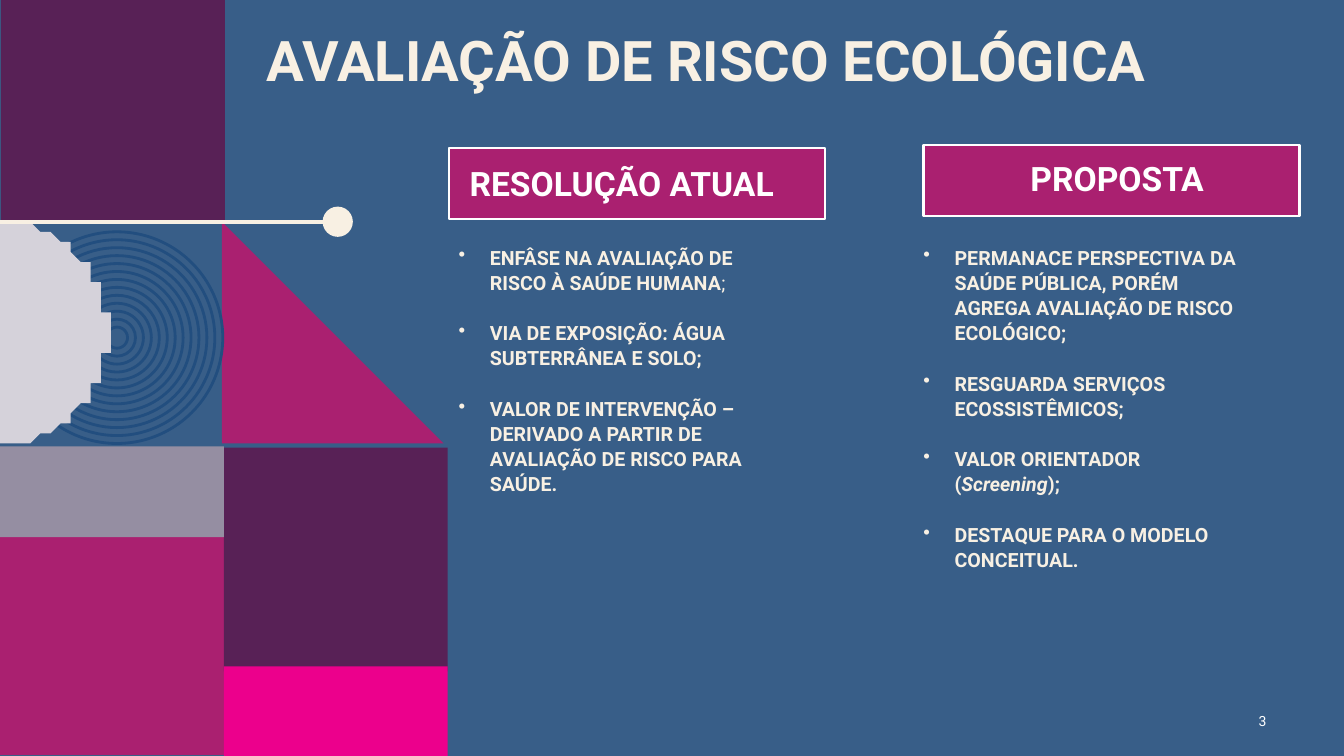
import math

import pptx
import pptx.dml.color
import pptx.enum.shapes
import pptx.enum.text
import pptx.oxml.ns
import pptx.util
from lxml import etree

SHAPE = pptx.enum.shapes.MSO_SHAPE
ALIGN = pptx.enum.text.PP_ALIGN
ANCHOR = pptx.enum.text.MSO_ANCHOR
PURPLE, MAGENTA, PINK, BLUE = "582156", "AA2070", "EC008C", "385E88"
NAVY, GRAY, PALE, CREAM, WHITE = "224E7F", "958EA2", "D5D2DA", "F8F0E3", "FFFFFF"


def color(hex_string):
    return pptx.dml.color.RGBColor.from_string(hex_string)


def paint(shape, fill=None, line=None, weight=0):
    shape.shadow.inherit = False
    if fill:
        shape.fill.solid()
        shape.fill.fore_color.rgb = color(fill)
    else:
        shape.fill.background()
    if line:
        shape.line.color.rgb = color(line)
        shape.line.width = pptx.util.Pt(weight)
    else:
        shape.line.fill.background()


presentation = pptx.Presentation()
presentation.slide_width = pptx.util.Inches(13.33)
presentation.slide_height = pptx.util.Inches(7.5)
slide = presentation.slides.add_slide(presentation.slide_layouts[6])
slide.background.fill.solid()
slide.background.fill.fore_color.rgb = color(BLUE)
shapes = slide.shapes

# Grid: 75 rows of cells; the decoration uses square tiles
cell = presentation.slide_height / 75
tile = 22.2

# Tiles and triangle: left, top, width, height in cells
tiles = [
    (0.1, 0, tile, tile, PURPLE),
    (0, 52.7, tile, tile, MAGENTA),
    (tile, 2 * tile, tile, tile, PURPLE),
    (tile, 66.1, tile, 8.9, PINK),
    (-0.1, 21.9, tile, tile, BLUE),
]
for *box, fill in tiles:
    shape = shapes.add_shape(SHAPE.RECTANGLE, *[int(n * cell) for n in box])
    paint(shape, fill)

builder = shapes.build_freeform(tile, tile, scale=cell)
builder.add_line_segments([(2 * tile, 2 * tile), (tile, 2 * tile)], close=True)
paint(builder.convert_to_shape(), MAGENTA)

# Concentric rings
ring_count, ring_x, ring_y = 13, 11.6, 33.5
for index in range(ring_count):
    radius = 10.5 - index * 9.45 / (ring_count - 1)
    box = (ring_x - radius, ring_y - radius, 2 * radius, 2 * radius)
    ring = shapes.add_shape(SHAPE.OVAL, *[int(n * cell) for n in box])
    paint(ring, None, NAVY, 2)

# Gray band and half disc
band = shapes.add_shape(
    SHAPE.RECTANGLE, 0, *[int(n * cell) for n in (44.3, tile, 9)])
paint(band, GRAY)

disc_x, disc_y, disc_radius = -0.4, 33, 11.1
builder = shapes.build_freeform(0, disc_y - disc_radius, scale=cell)
arc = [(disc_x + disc_radius * math.cos(math.radians(angle)),
        disc_y + disc_radius * math.sin(math.radians(angle)))
       for angle in range(-87, 88, 3)]
builder.add_line_segments(arc + [(0, disc_y + disc_radius)], close=True)
paint(builder.convert_to_shape(), PALE)

# Line ending in a dot
connector = shapes.add_connector(
    pptx.enum.shapes.MSO_CONNECTOR.STRAIGHT,
    *[int(n * cell) for n in (0, 22, 32.6, 22)])
connector.line.color.rgb = color(CREAM)
connector.line.width = pptx.util.Pt(3)
etree.SubElement(connector._element.spPr, pptx.oxml.ns.qn("a:effectLst"))
dot = shapes.add_shape(
    SHAPE.OVAL, *[int(n * cell) for n in (32, 20.5, 3, 3)])
paint(dot, CREAM)

# Heading frames
for left, top in [(91.6, 14.4), (44.5, 14.7)]:
    frame = shapes.add_shape(
        SHAPE.RECTANGLE, *[int(n * cell) for n in (left, top, 37.3, 7)])
    paint(frame, MAGENTA, WHITE, 1.5)

# Title, headings and slide number
heading = {"line_spacing": pptx.util.Pt(24)}
labels = [
    ("AVALIAÇÃO DE RISCO ECOLÓGICA", (25.5, 2.8, 98.6, 14.5), 40, CREAM, True,
     {"line_spacing": 0.9}, ANCHOR.TOP),
    ("RESOLUÇÃO ATUAL", (45.6, 16.3, 35, 4), 24, WHITE, True,
     heading, ANCHOR.TOP),
    ("PROPOSTA", (93.3, 15.8, 35, 4), 24, WHITE, True,
     {**heading, "alignment": ALIGN.CENTER}, ANCHOR.TOP),
    ("3", (121.6, 69.5, 5, 4), 10, WHITE, False,
     {"alignment": ALIGN.RIGHT}, ANCHOR.MIDDLE),
]
for text, box, size, text_color, bold, paragraph_format, anchor in labels:
    text_frame = shapes.add_textbox(*[int(n * cell) for n in box]).text_frame
    text_frame.word_wrap = True
    text_frame.vertical_anchor = anchor
    paragraph = text_frame.paragraphs[0]
    for name, value in paragraph_format.items():
        setattr(paragraph, name, value)
    run = paragraph.add_run()
    run.text = text
    run.font.color.rgb = color(text_color)
    font_format = {"name": "Roboto", "size": pptx.util.Pt(size), "bold": bold}
    for name, value in font_format.items():
        setattr(run.font, name, value)

# Bullet columns: each item is a list of runs with their differing format
columns = [
    (44.5, [
        [("ENFÂSE NA AVALIAÇÃO DE RISCO À SAÚDE HUMANA", {}),
         (";", {"bold": False})],
        [("VIA DE EXPOSIÇÃO: ÁGUA SUBTERRÂNEA E SOLO;", {})],
        [("VALOR DE INTERVENÇÃO – DERIVADO A PARTIR DE AVALIAÇÃO DE RISCO "
          "PARA SAÚDE.", {})],
    ]),
    (90.6, [
        [("PERMANACE PERSPECTIVA DA SAÚDE PÚBLICA, PORÉM AGREGA AVALIAÇÃO "
          "DE RISCO ECOLÓGICO;", {})],
        [("RESGUARDA SERVIÇOS ECOSSISTÊMICOS;", {})],
        [("VALOR ORIENTADOR (", {}), ("Screening", {"italic": True}),
         (");", {})],
        [("DESTAQUE PARA O MODELO CONCEITUAL.", {})],
    ]),
]
indent = pptx.util.Inches(0.31)
bullet_font = {"name": "Roboto", "size": pptx.util.Pt(14), "bold": True}
for left, items in columns:
    text_frame = shapes.add_textbox(
        *[int(n * cell) for n in (left, 23.7, 35, 13)]).text_frame
    text_frame.word_wrap = True
    text_frame.margin_right = pptx.util.Inches(0.2)
    for index, item in enumerate(items):
        paragraph = text_frame.add_paragraph() if index else text_frame.paragraphs[0]
        paragraph.line_spacing = pptx.util.Pt(18)
        paragraph.space_before = pptx.util.Pt(18 if index else 0)
        properties = paragraph._p.get_or_add_pPr()
        properties.set("marL", str(indent))
        properties.set("indent", str(-indent))
        bullet = etree.SubElement(properties, pptx.oxml.ns.qn("a:buChar"))
        bullet.set("char", "•")
        for text, difference in item:
            run = paragraph.add_run()
            run.text = text
            run.font.color.rgb = color(CREAM)
            for name, value in {**bullet_font, **difference}.items():
                setattr(run.font, name, value)

presentation.save("out.pptx")
